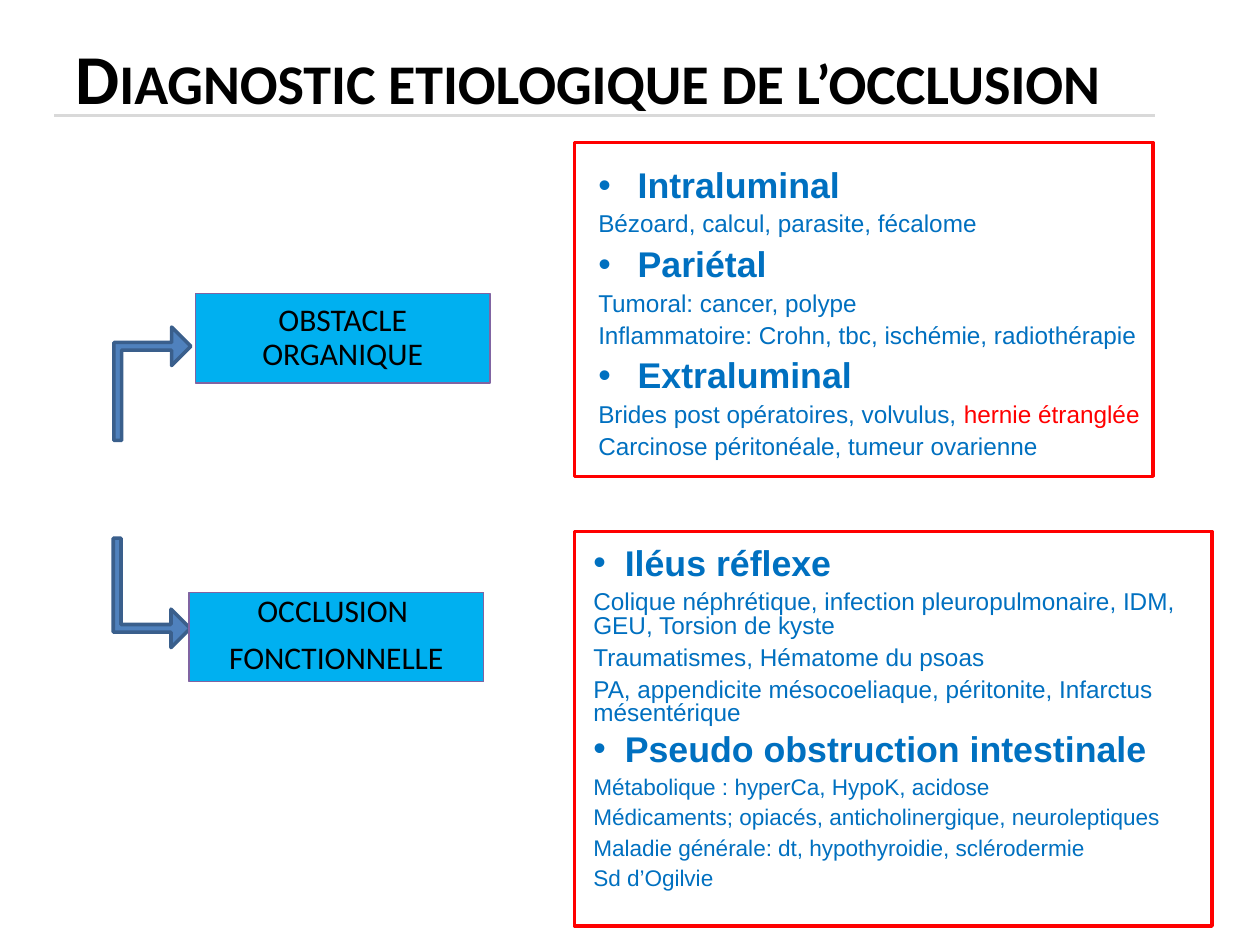
from pptx import Presentation
from pptx.dml.color import RGBColor
from pptx.enum.shapes import MSO_CONNECTOR, MSO_SHAPE
from pptx.enum.text import MSO_ANCHOR, PP_ALIGN
from pptx.oxml.ns import qn
from pptx.util import Pt
from lxml import etree

COLORS = {"black": "000000", "rule": "D9D9D9", "arrow": "4F81BD", "arrow_edge": "3A5F8C",
          "label": "00B0F0", "label_edge": "8064A2", "text": "0070C0", "red": "FF0000",
          "white": "FFFFFF"}
HEAD = 20.4  # size of the bulleted headings


def add_box(kind, left, top, width, height, fill=None, line=None, weight=0.75,
            inset=(7.2, 3.6), anchor=MSO_ANCHOR.TOP):
    box = page.shapes.add_shape(kind, Pt(left), Pt(top), Pt(width), Pt(height))
    box.shadow.inherit = False
    for part, color in ((box.fill, fill), (box.line.fill, line)):
        if color:
            part.solid()
            part.fore_color.rgb = RGBColor.from_string(COLORS[color])
        else:
            part.background()
    if line:
        box.line.width = Pt(weight)
    frame = box.text_frame
    frame.word_wrap = True
    frame.vertical_anchor = anchor
    frame.margin_left = frame.margin_right = Pt(inset[0])
    frame.margin_top = frame.margin_bottom = Pt(inset[1])
    return box


def write(frame, text, size=18, font="Calibri", color="black", bold=False, small_caps=False,
          align=PP_ALIGN.LEFT, spacing=1, before=0, margin=0, hang=0, accent=""):
    """Add one paragraph; a hang makes it a bullet, accent is a red ending."""
    first = frame.paragraphs[0]
    para = frame.add_paragraph() if first.runs else first
    para.alignment = align
    para.line_spacing = spacing
    para.space_before = Pt(before)
    props = para._p.get_or_add_pPr()
    props.set("marL", str(Pt(margin + hang)))
    props.set("indent", str(-Pt(hang)))
    if hang:
        etree.SubElement(props, qn("a:buFont")).set("typeface", "Arial")
        etree.SubElement(props, qn("a:buChar")).set("char", "•")
    for part, tint in ((text, color), (accent, "red")):
        if part:
            span = para.add_run()
            span.text = part
            span.font.size = Pt(size)
            span.font.name = font
            span.font.bold = bold
            span.font.color.rgb = RGBColor.from_string(COLORS[tint])
            if small_caps:
                span._r.get_or_add_rPr().set("cap", "small")


deck = Presentation()
deck.slide_width, deck.slide_height = Pt(720), Pt(540)
page = deck.slides.add_slide(deck.slide_layouts[6])

# Title and rule
rule = page.shapes.add_connector(MSO_CONNECTOR.STRAIGHT, Pt(31), Pt(66), Pt(660), Pt(66))
rule.line.color.rgb = RGBColor.from_string(COLORS["rule"])
rule.line.width = Pt(1.5)
etree.SubElement(rule._element.spPr, qn("a:effectLst"))
title = add_box(MSO_SHAPE.RECTANGLE, 36, 21.6, 648, 44, anchor=MSO_ANCHOR.MIDDLE)
write(title.text_frame, "Diagnostic etiologique de l’occlusion", size=40, bold=True,
      small_caps=True)

# Bent arrows: the upper one is mirrored
for left, top, width, mirrored in ((54.7, 197.3, 64.8, True), (55.4, 316.8, 62.6, False)):
    arrow = add_box(MSO_SHAPE.BENT_UP_ARROW, left, top, width, 44,
                    fill="arrow", line="arrow_edge", weight=2)
    arrow.adjustments[0] = 0.1
    arrow.rotation = 90
    if mirrored:
        arrow._element.spPr.find(qn("a:xfrm")).set("flipH", "1")

# Blue labels
labels = [(111.6, 167.8, 0.9, ["OBSTACLE ORGANIQUE"]),
          (108, 338.4, 0.8, ["OCCLUSION ", "FONCTIONNELLE"])]
for left, top, spacing, lines in labels:
    label = add_box(MSO_SHAPE.RECTANGLE, left, top, 168.5, 51.1, fill="label",
                    line="label_edge", inset=(5, 2.9), anchor=MSO_ANCHOR.MIDDLE)
    for line in lines:
        write(label.text_frame, line, align=PP_ALIGN.CENTER, spacing=spacing, before=10)

# Cause lists, each inside a red frame
organic = [("Intraluminal", HEAD),
           ("Bézoard, calcul, parasite, fécalome", 13.9),
           ("Pariétal", HEAD),
           ("Tumoral: cancer, polype", 13.9),
           ("Inflammatoire: Crohn, tbc, ischémie, radiothérapie", 13.9),
           ("Extraluminal", HEAD),
           ("Brides post opératoires, volvulus, ", 13.9, "hernie étranglée"),
           ("Carcinose péritonéale, tumeur ovarienne", 13.9)]
functional = [("Iléus réflexe", HEAD),
              ("Colique néphrétique, infection pleuropulmonaire, IDM, GEU, Torsion de kyste", 13.9),
              ("Traumatismes, Hématome du psoas", 13.9),
              ("PA, appendicite mésocoeliaque, péritonite, Infarctus mésentérique", 13.9),
              ("Pseudo obstruction intestinale", HEAD),
              ("Métabolique : hyperCa, HypoK, acidose", 12.9),
              ("Médicaments; opiacés, anticholinergique, neuroleptiques", 12.9),
              ("Maladie générale: dt, hypothyroidie, sclérodermie", 12.9),
              ("Sd d’Ogilvie", 12.9)]
# text area, red frame, inset, line spacing, space before by size, hang, lines
panels = [((298.8, 92.2, 414.7, 186.5), (328.3, 81.4, 330.5, 190.8), (7.2, 3.6),
           0.9, lambda size: round(size * 0.24, 1), 22.5, organic),
          ((298.1, 311, 391, 218.2), (328.3, 303.8, 364.3, 225.4), (5, 2.9),
           0.8, lambda size: 5, 18, functional)]
for area, border, inset, spacing, before, hang, lines in panels:
    causes = add_box(MSO_SHAPE.RECTANGLE, *area, line="white", inset=inset)
    for text, size, *accent in lines:
        heading = size == HEAD
        write(causes.text_frame, text, size=size, font="Arial", color="text", bold=heading,
              spacing=spacing, before=before(size), margin=36,
              hang=hang if heading else 0, accent="".join(accent))
    add_box(MSO_SHAPE.RECTANGLE, *border, line="red", weight=2)

deck.save("out.pptx")
